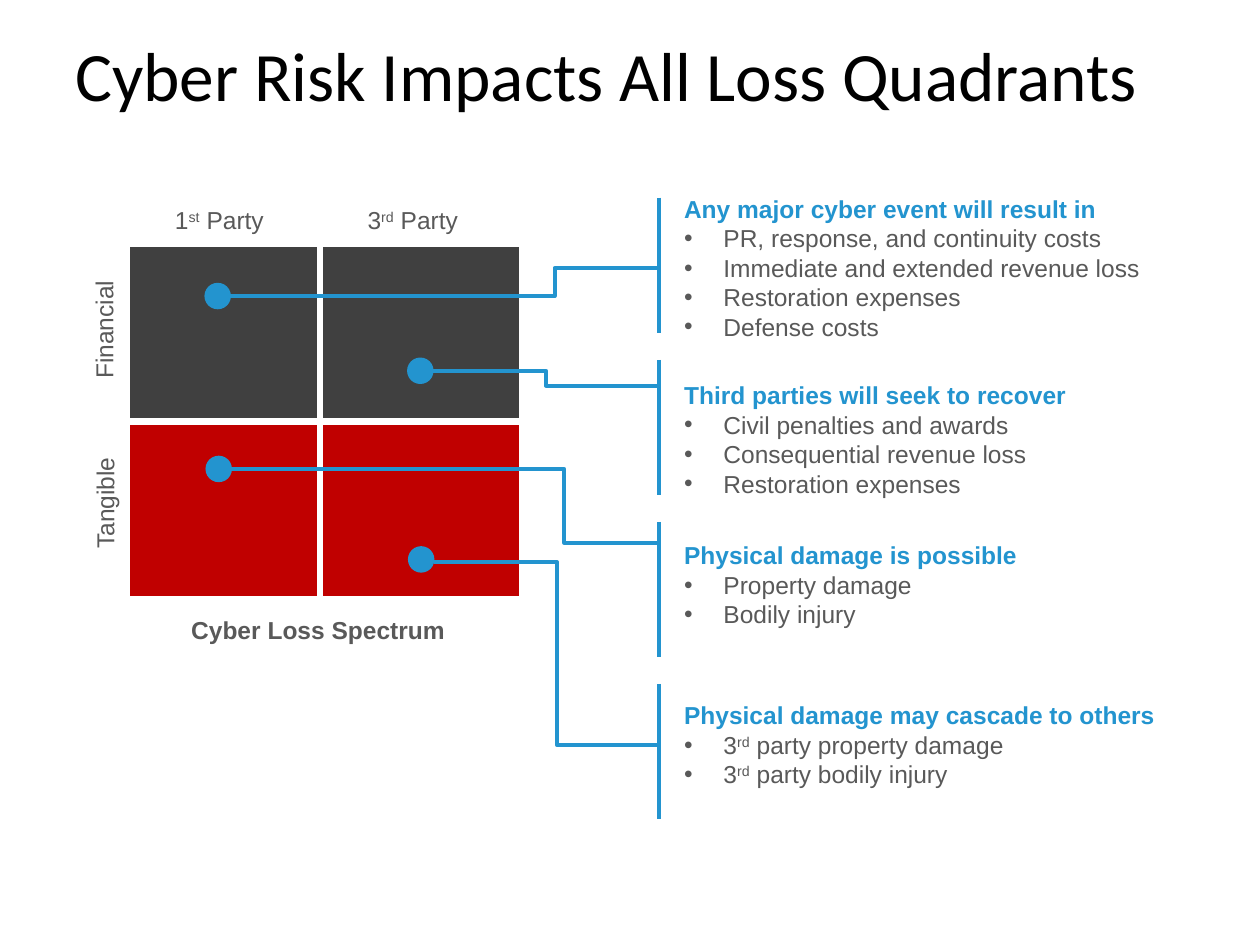
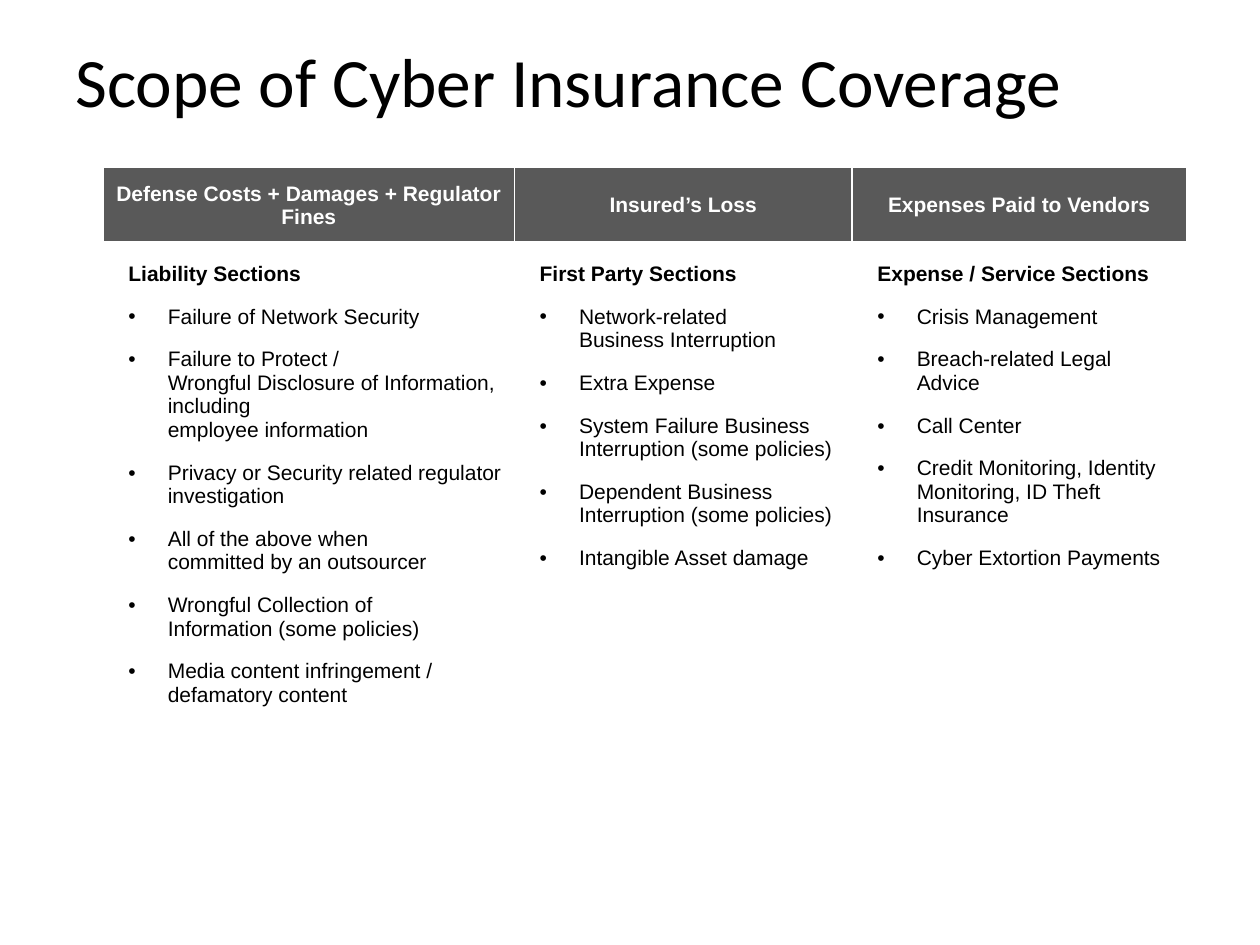
from dataclasses import dataclass

from lxml import etree
from pptx import Presentation
from pptx import util as u
from pptx.dml.color import RGBColor
from pptx.enum import shapes, text
from pptx.oxml.ns import qn

Pt = u.Pt
HUES = {"ink": "000000", "paper": "FFFFFF", "gray": "595959",
        "dark": "404040", "red": "C00000", "blue": "2394CF"}
HEAD, BODY = "Calibri", "Arial"
INDENT = 22.5
BAR_X, BAR_TOP, BAR_STEP, BAR_TALL = 376.4, 113, 92.6, 77.2
DOT = 14.4


@dataclass
class Label:
    words: str
    left: float
    top: float
    wide: float
    turn: int = 0
    bold: bool = False


@dataclass
class Callout:
    """A list beside its bar, tied by an elbow to a dot in a quadrant."""
    head: str
    items: list[str]
    top: float
    wide: float
    dot: tuple[float, float]
    start: float
    bend: float
    end: float


@dataclass
class Column:
    title: str
    wide: float
    head: str
    items: list[str]


LABELS = [
    Label("1^st^ Party", 92.9, 113.8, 66.2),
    Label("3^rd^ Party", 203, 113.8, 67.7),
    Label("Financial", 23.8, 175.7, 71.3, 270),
    Label("Tangible", 26.6, 275, 67, 270),
    Label("Cyber Loss Spectrum", 102.2, 347.8, 160.6, bold=True),
]

CALLOUTS = [
    Callout("Any major cyber event will result in",
            ["PR, response, and continuity costs",
             "Immediate and extended revenue loss",
             "Restoration expenses", "Defense costs"],
            107.3, 275.8, (117.2, 162), 153.2, 316.8, 169.2),
    Callout("Third parties will seek to recover",
            ["Civil penalties and awards", "Consequential revenue loss",
             "Restoration expenses"],
            213.8, 234, (233, 204.7), 220.4, 312, 211.9),
    Callout("Physical damage is possible",
            ["Property damage", "Bodily injury"],
            305.3, 205.2, (117.8, 260.8), 310.3, 322.4, 268),
    Callout("Physical damage may cascade to others",
            ["3^rd^ party property damage", "3^rd^ party bodily injury"],
            396.7, 284.4, (233.5, 312.5), 425.6, 318.2, 321.1),
]

COLUMNS = [
    Column("Defense Costs + Damages + Regulator Fines", 235,
           "Liability Sections",
           ["Failure of Network Security",
            "Failure to Protect /\nWrongful Disclosure of Information, "
            "including\nemployee information",
            "Privacy or Security related regulator investigation",
            "All of the above when\ncommitted by an outsourcer",
            "Wrongful Collection of\nInformation (some policies)",
            "Media content infringement / defamatory content"]),
    Column("Insured’s Loss", 193, "First Party Sections",
           ["Network-related\nBusiness Interruption", "Extra Expense",
            "System Failure Business Interruption (some policies)",
            "Dependent Business Interruption (some policies)",
            "Intangible Asset damage"]),
    Column("Expenses Paid to Vendors", 191, "Expense / Service Sections",
           ["Crisis Management", "Breach-related Legal Advice", "Call Center",
            "Credit Monitoring, Identity Monitoring, ID Theft Insurance",
            "Cyber Extortion Payments"]),
]


def hue(name: str) -> RGBColor:
    return RGBColor.from_string(HUES[name])


def write(para, words: str, size: float, color: str, bold: bool = False,
          face: str = BODY) -> None:
    """Fill a paragraph; text between carets is raised."""
    for row, line in enumerate(words.split("\n")):
        if row:
            para.add_line_break()
        for part, piece in enumerate(line.split("^")):
            run = para.add_run()
            run.text = piece
            if part % 2:
                run._r.get_or_add_rPr().set("baseline", "30000")
    font = para.font
    font.name, font.size, font.bold = face, Pt(size), bold
    font.color.rgb = hue(color)


def bullet(para) -> None:
    props = para._p.get_or_add_pPr()
    props.set("marL", str(Pt(INDENT)))
    props.set("indent", str(-Pt(INDENT)))
    etree.SubElement(props, qn("a:buFont")).set("typeface", "Arial")
    etree.SubElement(props, qn("a:buChar")).set("char", "•")


def fill_list(frame, head: str, items: list[str], size: float,
              head_hue: str, item_hue: str,
              before: float = 0, after: float = 0) -> None:
    """Write a bold heading and its bulleted items."""
    first = frame.paragraphs[0]
    write(first, head, size, head_hue, True)
    first.space_after = Pt(after)
    for item in items:
        para = frame.add_paragraph()
        bullet(para)
        write(para, item, size, item_hue)
        para.space_before, para.space_after = Pt(before), Pt(after)


def add_box(slide, left: float, top: float, wide: float, tall: float):
    """Add an unwrapped text box that grows with its text."""
    box = slide.shapes.add_textbox(Pt(left), Pt(top), Pt(wide), Pt(tall))
    box.text_frame.word_wrap = False
    box.text_frame.auto_size = text.MSO_AUTO_SIZE.SHAPE_TO_FIT_TEXT
    return box


def add_title(slide, words: str, top: float) -> None:
    box = slide.shapes.add_textbox(Pt(36), Pt(top), Pt(648), Pt(41))
    frame = box.text_frame
    frame.word_wrap = True
    frame.vertical_anchor = text.MSO_ANCHOR.MIDDLE
    para = frame.paragraphs[0]
    write(para, words, 39.6, "ink", face=HEAD)
    para.line_spacing = 0.9


def add_form(slide, kind, left: float, top: float, wide: float, tall: float,
             color: str, edge: str, weight: float) -> None:
    form = slide.shapes.add_shape(kind, Pt(left), Pt(top), Pt(wide), Pt(tall))
    form.shadow.inherit = False
    form.fill.solid()
    form.fill.fore_color.rgb = hue(color)
    form.line.color.rgb = hue(edge)
    form.line.width = Pt(weight)


def add_line(slide, kind, x1: float, y1: float, x2: float, y2: float):
    line = slide.shapes.add_connector(kind, Pt(x1), Pt(y1), Pt(x2), Pt(y2))
    line.line.color.rgb = hue("blue")
    line.line.width = Pt(2.25)
    etree.SubElement(line._element.spPr, qn("a:effectLst"))
    return line


def add_elbow(slide, call: Callout) -> None:
    """Tie the bar to the right edge of the dot, turning at call.bend."""
    end_x = call.dot[0] + DOT
    line = add_line(slide, shapes.MSO_CONNECTOR.ELBOW,
                    BAR_X, call.start, end_x, call.end)
    ratio = (BAR_X - call.bend) / (BAR_X - end_x)
    geom = line._element.spPr.find(qn("a:prstGeom"))
    guides = geom.find(qn("a:avLst"))
    if guides is None:
        guides = etree.SubElement(geom, qn("a:avLst"))
    guide = etree.SubElement(guides, qn("a:gd"))
    guide.set("name", "adj1")
    guide.set("fmla", f"val {round(ratio * 100000)}")


def edge_cell(cell, base: float) -> None:
    """Give a cell white borders, the lower one base points thick."""
    props = cell._tc.get_or_add_tcPr()
    for side, weight in zip("LRTB", (1, 1, 1, base)):
        line = etree.SubElement(props, qn(f"a:ln{side}"), w=str(Pt(weight)))
        fill = etree.SubElement(line, qn("a:solidFill"))
        etree.SubElement(fill, qn("a:srgbClr"), val=HUES["paper"])


def set_pads(cell, left: float, top: float, right: float, base: float) -> None:
    cell.margin_left, cell.margin_top = Pt(left), Pt(top)
    cell.margin_right, cell.margin_bottom = Pt(right), Pt(base)


def draw_risk(slide) -> None:
    add_title(slide, "Cyber Risk Impacts All Loss Quadrants", 24.5)
    for row, color in enumerate(("dark", "red")):
        for col in range(2):
            add_form(slide, shapes.MSO_SHAPE.RECTANGLE, 72.7 + 110.2 * col,
                     139.7 + 101.5 * row, 115.2, 100.8, color, "paper", 3)
    for label in LABELS:
        box = add_box(slide, label.left, label.top, label.wide, 24.5)
        box.rotation = label.turn
        write(box.text_frame.paragraphs[0], label.words, 14, "gray",
              label.bold)
    for row, call in enumerate(CALLOUTS):
        tall = 7.2 + 17 * (len(call.items) + 1)
        box = add_box(slide, 383.8, call.top, call.wide, tall)
        fill_list(box.text_frame, call.head, call.items, 14, "blue", "gray")
        top = BAR_TOP + BAR_STEP * row
        add_line(slide, shapes.MSO_CONNECTOR.STRAIGHT,
                 BAR_X, top, BAR_X, top + BAR_TALL)
        add_form(slide, shapes.MSO_SHAPE.OVAL, *call.dot, DOT, DOT,
                 "blue", "blue", 0.75)
        add_elbow(slide, call)


def draw_scope(slide) -> None:
    add_title(slide, "Scope of Cyber Insurance Coverage", 28)
    wide = sum(column.wide for column in COLUMNS)
    table = slide.shapes.add_table(2, len(COLUMNS), Pt(59), Pt(95.8),
                                   Pt(wide), Pt(337)).table
    table.horz_banding = False
    table.rows[0].height, table.rows[1].height = Pt(43), Pt(294)
    for col, column in enumerate(COLUMNS):
        table.columns[col].width = Pt(column.wide)
        top, body = table.cell(0, col), table.cell(1, col)
        edge_cell(top, 3)
        top.fill.solid()
        top.fill.fore_color.rgb = hue("gray")
        top.vertical_anchor = text.MSO_ANCHOR.MIDDLE
        set_pads(top, 7.2, 7.2, 7.2, 7.2)
        para = top.text_frame.paragraphs[0]
        write(para, column.title, 12, "paper", True)
        para.alignment = text.PP_ALIGN.CENTER
        edge_cell(body, 1)
        body.fill.background()
        set_pads(body, 14.4, 10.8, 7.2, 3.6)
        fill_list(body.text_frame, column.head, column.items, 12,
                  "ink", "ink", 9.2, 1.8)


def main() -> None:
    deck = Presentation()
    deck.slide_width, deck.slide_height = Pt(720), Pt(540)
    for draw in (draw_risk, draw_scope):
        draw(deck.slides.add_slide(deck.slide_layouts[6]))
    deck.save("out.pptx")


if __name__ == "__main__":
    main()
